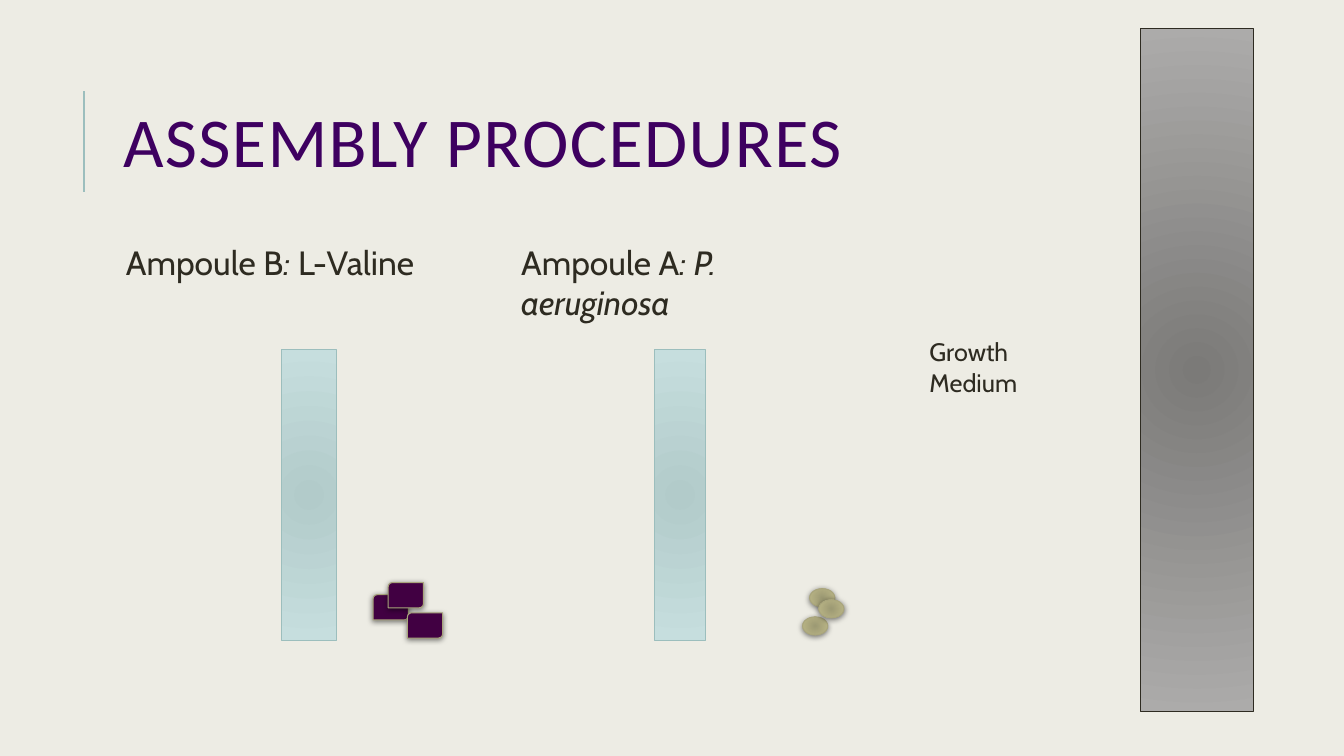
"""Build the assembly procedures slide."""
from typing import Any, NamedTuple

from pptx import Presentation
from pptx import util as u
from pptx.dml.color import RGBColor
from pptx.enum import shapes, text
from pptx.oxml import parse_xml
from pptx.oxml.ns import nsdecls, qn

PAPER = RGBColor(0xED, 0xEC, 0xE4)
PURPLE = RGBColor(0x3E, 0x00, 0x60)
PLUM = RGBColor(0x41, 0x00, 0x42)
INK = RGBColor(0x2E, 0x2B, 0x21)
TEAL = RGBColor(0x9C, 0xBE, 0xBD)
TEAL_IN = RGBColor(0xB2, 0xCB, 0xCA)
TEAL_OUT = RGBColor(0xC6, 0xDE, 0xDE)
GRAY_IN = RGBColor(0x7B, 0x7A, 0x78)
GRAY_OUT = RGBColor(0xAC, 0xAB, 0xAA)
OLIVE = RGBColor(0xA9, 0xA5, 0x7C)
OLIVE_IN = RGBColor(0x9D, 0x9A, 0x74)
OLIVE_OUT = RGBColor(0xBD, 0xB8, 0x88)
KINDS = shapes.MSO_SHAPE


class Look(NamedTuple):
    """Kind, fill colours, outline and shadow of a shape."""
    kind: Any
    fills: tuple[RGBColor, ...]
    edge: RGBColor
    shade: bool = False
    turn: int = 0


class Part(NamedTuple):
    """A shape and its place in inches."""
    look: Look
    left: float
    top: float
    width: float
    height: float


class Label(NamedTuple):
    """A text box with runs marked as italic or not."""
    left: float
    top: float
    width: float
    height: float
    size: int
    runs: tuple[tuple[str, bool], ...]
    inset: float = 0.1


TUBE = Look(KINDS.RECTANGLE, (TEAL_IN, TEAL_OUT), TEAL, turn=90)
MEDIUM = Look(KINDS.RECTANGLE, (GRAY_IN, GRAY_OUT), INK, turn=90)
CELL = Look(KINDS.OVAL, (OLIVE_IN, OLIVE_OUT), OLIVE, shade=True)
GRAIN = Look(KINDS.ROUND_2_DIAG_RECTANGLE, (PLUM,), OLIVE, shade=True)

PARTS = [
    Part(MEDIUM, 8.48, 3.11, 6.78, 1.12),
    Part(TUBE, 1.62, 4.64, 2.89, 0.54),
    Part(TUBE, 5.3, 4.66, 2.89, 0.5),
    *(Part(CELL, x, y, 0.25, 0.18)
      for x, y in ((8.03, 5.84), (7.96, 6.12), (8.12, 5.95))),
    *(Part(GRAIN, x, y, 0.35, 0.25)
      for x, y in ((3.7, 5.9), (3.85, 5.78), (4.04, 6.08))),
]
LABELS = [
    Label(5.07, 2.35, 3.72, 0.5, 24,
          (("Ampoule A", False), (": P. aeruginosa", True)), inset=0.4),
    Label(1.15, 2.35, 3.72, 0.5, 24,
          (("Ampoule B", False), (": ", True), ("L-Valine", False))),
    Label(9.12, 3.29, 1.85, 0.4, 18, (("Growth Medium", False),)),
]


def put(item: Any, form: dict[str, Any]) -> None:
    """Set each format value on an item."""
    for name, value in form.items():
        setattr(item, name, value)


def blend(shape: Any, inner: RGBColor, outer: RGBColor) -> None:
    """Fill a shape with a round gradient."""
    shape.fill.background()
    props = shape._element.spPr
    props.replace(props.find(qn("a:noFill")), parse_xml(
        f'<a:gradFill {nsdecls("a")} rotWithShape="1"><a:gsLst>'
        f'<a:gs pos="0"><a:srgbClr val="{inner}"/></a:gs>'
        f'<a:gs pos="100000"><a:srgbClr val="{outer}"/></a:gs></a:gsLst>'
        '<a:path path="circle"><a:fillToRect l="50000" t="50000" '
        'r="50000" b="50000"/></a:path></a:gradFill>'))


def draw_part(slide: Any, part: Part) -> None:
    """Draw one shape."""
    look = part.look
    shape = slide.shapes.add_shape(look.kind, *map(u.Inches, part[1:]))
    shape.rotation = look.turn
    shape.shadow.inherit = False
    if len(look.fills) == 2:
        blend(shape, *look.fills)
    else:
        shape.fill.solid()
        shape.fill.fore_color.rgb = look.fills[0]
    shape.line.color.rgb = look.edge
    shape.line.width = u.Pt(0.75)
    if look.shade:
        shape._element.spPr.find(qn("a:effectLst")).append(parse_xml(
            f'<a:outerShdw {nsdecls("a")} blurRad="{u.Pt(4)}" '
            f'dist="{u.Pt(1)}" dir="5400000" rotWithShape="0">'
            '<a:srgbClr val="000000"><a:alpha val="50000"/></a:srgbClr>'
            '</a:outerShdw>'))


def draw_label(slide: Any, label: Label) -> None:
    """Draw one text box."""
    frame = slide.shapes.add_textbox(*map(u.Inches, label[:4])).text_frame
    put(frame, {"word_wrap": True, "margin_right": u.Inches(label.inset),
                "auto_size": text.MSO_AUTO_SIZE.SHAPE_TO_FIT_TEXT})
    for words, slant in label.runs:
        run = frame.paragraphs[0].add_run()
        run.text = words
        put(run.font, {"name": "Cabin", "size": u.Pt(label.size),
                       "italic": slant})
        run.font.color.rgb = INK


def draw_title(slide: Any) -> None:
    """Place the title and the rule beside it."""
    title = slide.shapes.title
    put(title, {"left": u.Inches(1.12), "top": u.Inches(0.64),
                "width": u.Inches(10.63), "height": u.Inches(1.64)})
    frame = title.text_frame
    put(frame, {"word_wrap": True, "auto_size": text.MSO_AUTO_SIZE.NONE,
                "vertical_anchor": text.MSO_ANCHOR.MIDDLE})
    line = frame.paragraphs[0]
    put(line, {"alignment": text.PP_ALIGN.LEFT, "line_spacing": 0.8})
    run = line.add_run()
    run.text = "ASSEMBLY PROCEDURES"
    put(run.font, {"name": "Calibri", "size": u.Pt(50)})
    run.font.color.rgb = PURPLE
    run.font._element.set("spc", "100")
    rule = slide.shapes.add_connector(
        shapes.MSO_CONNECTOR.STRAIGHT,
        *map(u.Inches, (0.83, 1.9, 0.83, 0.9)))
    rule.line.color.rgb = TEAL
    rule.line.width = u.Pt(1.5)
    rule._element.spPr.append(parse_xml(f'<a:effectLst {nsdecls("a")}/>'))


def main() -> None:
    """Build and save the deck."""
    deck = Presentation()
    put(deck, {"slide_width": u.Inches(13.33),
               "slide_height": u.Inches(7.5)})
    slide = deck.slides.add_slide(deck.slide_layouts[5])
    slide.background.fill.solid()
    slide.background.fill.fore_color.rgb = PAPER
    draw_title(slide)
    for part in PARTS:
        draw_part(slide, part)
    for label in LABELS:
        draw_label(slide, label)
    deck.save("out.pptx")


if __name__ == "__main__":
    main()
